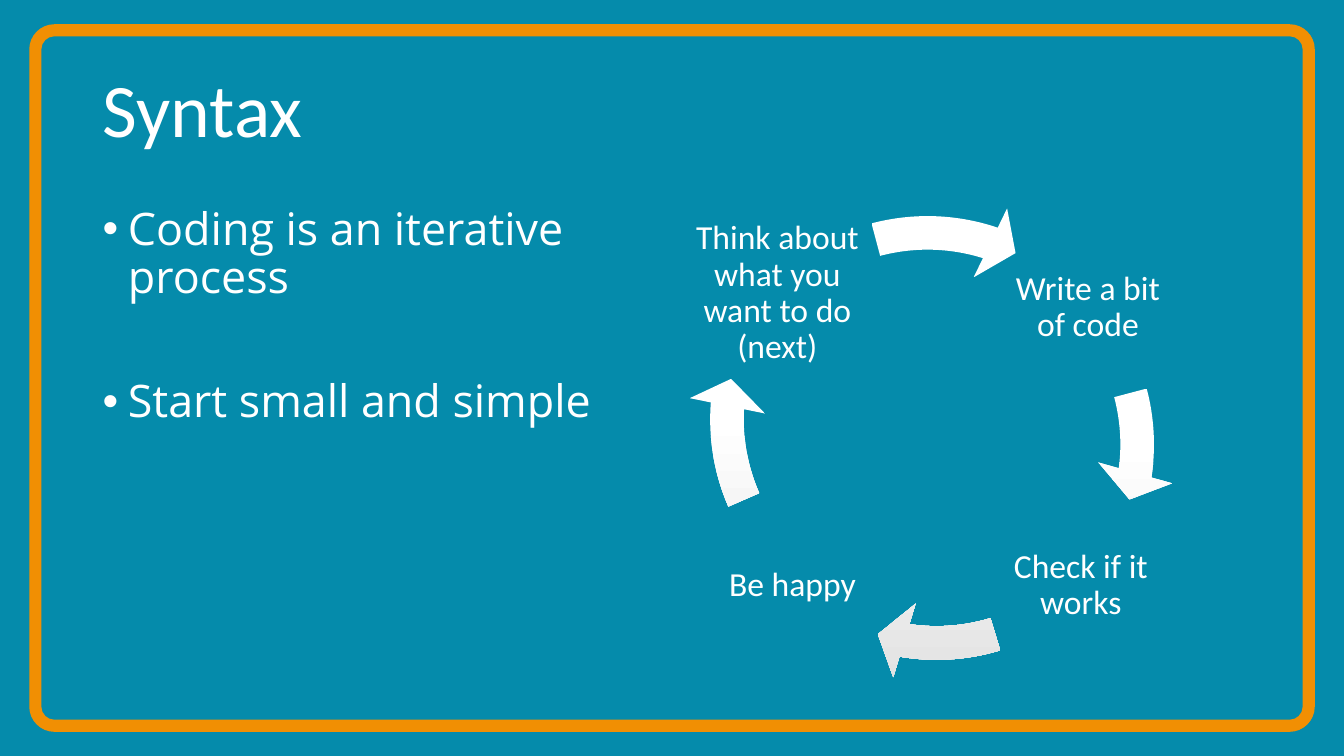
import pptx
import pptx.dml.color
import pptx.enum.shapes
import pptx.enum.text
import pptx.util
from lxml import etree
from pptx.oxml.ns import qn

RGBColor = pptx.dml.color.RGBColor
TEAL = RGBColor(0x05, 0x8B, 0xAB)
ORANGE = RGBColor(0xF1, 0x8F, 0x03)
WHITE = RGBColor(0xFF, 0xFF, 0xFF)
SILVER = RGBColor(0xE3, 0xE3, 0xE3)

ANCHOR = pptx.enum.text.MSO_ANCHOR
ALIGN = pptx.enum.text.PP_ALIGN
Inches = pptx.util.Inches
Pt = pptx.util.Pt

WIDTH, HEIGHT = 13.33, 7.5
BULLET_INDENT = 0.25
LABEL_SIDE = 1.68
ARROW_SIDE = 4.76
ARROW_THICKNESS, ARROW_HEAD_ANGLE, ARROW_HEAD_WIDTH = 0.07, 4.65, 0.08

TITLE_FORMAT = {"name": "Calibri", "size": Pt(54)}
BULLET_FORMAT = {"name": "Open Sans", "size": Pt(32)}
LABEL_FORMAT = {"name": "Calibri", "size": Pt(24)}

# Step, label corner, arrow corner, arrow end and start angles.
CYCLE = [
    ("Write a bit of code", (9.95, 2.21), (6.9, 2.03), (4.86, 207.1)),
    ("Check if it works", (9.88, 4.97), (6.91, 2.0), (59.51, 43.84)),
    ("Be happy", (7.02, 4.97), (6.83, 1.78), (110.29, 93.85)),
    ("Think about what you want to do (next)", (6.87, 2.07), (6.82, 1.93),
     (172.89, 153.08)),
]


def add_text(slide, box, lines, font_format, anchor=ANCHOR.TOP):
    frame = slide.shapes.add_textbox(*map(Inches, box)).text_frame
    frame.word_wrap = True
    frame.vertical_anchor = anchor
    frame.text = "\n".join(lines)
    for paragraph in frame.paragraphs:
        paragraph.line_spacing = 0.9
        for run in paragraph.runs:
            for key, value in font_format.items():
                setattr(run.font, key, value)
            run.font.color.rgb = WHITE
    return frame


def rounded_outline(box, radius):
    """Return start, two Bézier handles and end of each corner in turn."""
    left, top, width, height = box
    right, bottom = left + width, top + height
    handle = 0.45 * radius
    corners = [(right, bottom, 0, -1, -1, 0), (left, bottom, 1, 0, 0, -1),
               (left, top, 0, 1, 1, 0), (right, top, -1, 0, 0, 1)]
    points = []
    for x, y, from_x, from_y, to_x, to_y in corners:
        points += [(x + from_x * radius, y + from_y * radius),
                   (x + from_x * handle, y + from_y * handle),
                   (x + to_x * handle, y + to_y * handle),
                   (x + to_x * radius, y + to_y * radius)]
    return [(Inches(x), Inches(y)) for x, y in points]


def curve_corners(segments):
    """Merge the three segments of each corner into one Bézier curve."""
    for start in range(0, len(segments), 4):
        first, *others = segments[start:start + 3]
        first.tag = qn("a:cubicBezTo")
        for segment in others:
            first.append(segment[0])
            segment.getparent().remove(segment)


def add_border(slide, box, radius, thickness):
    left, top, width, height = box
    outer = rounded_outline(box, radius)
    inner = rounded_outline((left + thickness, top + thickness,
                             width - 2 * thickness, height - 2 * thickness),
                            radius - thickness)[::-1]
    builder = slide.shapes.build_freeform(*outer[0])
    builder.add_line_segments(outer[1:], close=True)
    builder.move_to(*inner[0])
    builder.add_line_segments(inner[1:], close=True)
    border = builder.convert_to_shape()
    segments = list(border._element.iter(qn("a:lnTo")))
    for contour in (segments[:len(segments) // 2], segments[len(segments) // 2:]):
        curve_corners(contour)
    border.shadow.inherit = False
    border.fill.solid()
    border.fill.fore_color.rgb = ORANGE
    border.line.fill.background()


def add_bullets(slide, box, lines):
    frame = add_text(slide, box, lines, BULLET_FORMAT)
    for paragraph in frame.paragraphs:
        properties = paragraph._p.get_or_add_pPr()
        properties.set("marL", str(Inches(BULLET_INDENT)))
        properties.set("indent", str(-Inches(BULLET_INDENT)))
        etree.SubElement(properties, qn("a:buFont"), typeface="Arial")
        etree.SubElement(properties, qn("a:buChar"), char="•")
    for paragraph in frame.paragraphs[1:]:
        paragraph.space_before = Pt(54)


def add_cycle_label(slide, corner, step):
    frame = add_text(slide, (*corner, LABEL_SIDE, LABEL_SIDE), [step],
                     LABEL_FORMAT, ANCHOR.MIDDLE)
    for side in ("left", "top", "right", "bottom"):
        setattr(frame, f"margin_{side}", Inches(0.03))
    frame.paragraphs[0].alignment = ALIGN.CENTER


def add_cycle_arrow(slide, corner, angles):
    arrow = slide.shapes.add_shape(
        pptx.enum.shapes.MSO_SHAPE.CIRCULAR_ARROW,
        *map(Inches, (*corner, ARROW_SIDE, ARROW_SIDE)))
    adjustments = (ARROW_THICKNESS, ARROW_HEAD_ANGLE, *angles, ARROW_HEAD_WIDTH)
    for index, value in enumerate(adjustments):
        arrow.adjustments[index] = value
    arrow.shadow.inherit = False
    arrow.line.fill.background()
    arrow.fill.gradient()
    arrow.fill.gradient_angle = 270
    for stop, position, color in zip(arrow.fill.gradient_stops,
                                     (0.5, 1), (WHITE, SILVER)):
        stop.position = position
        stop.color.rgb = color


def add_cycle(slide, steps):
    for step, label_corner, arrow_corner, angles in steps:
        add_cycle_label(slide, label_corner, step)
        add_cycle_arrow(slide, arrow_corner, angles)


def main():
    deck = pptx.Presentation()
    deck.slide_width, deck.slide_height = Inches(WIDTH), Inches(HEIGHT)
    slide = deck.slides.add_slide(deck.slide_layouts[6])
    slide.background.fill.solid()
    slide.background.fill.fore_color.rgb = TEAL
    add_border(slide, (0.29, 0.24, 12.75, 7.02), radius=0.25, thickness=0.12)
    add_text(slide, (0.92, 0.4, 11.5, 1.45), ["Syntax"], TITLE_FORMAT, ANCHOR.MIDDLE)
    add_cycle(slide, CYCLE)
    add_bullets(slide, (0.92, 2, 5.58, 4.76),
                ["Coding is an iterative process", "Start small and simple"])
    deck.save("out.pptx")


if __name__ == "__main__":
    main()
